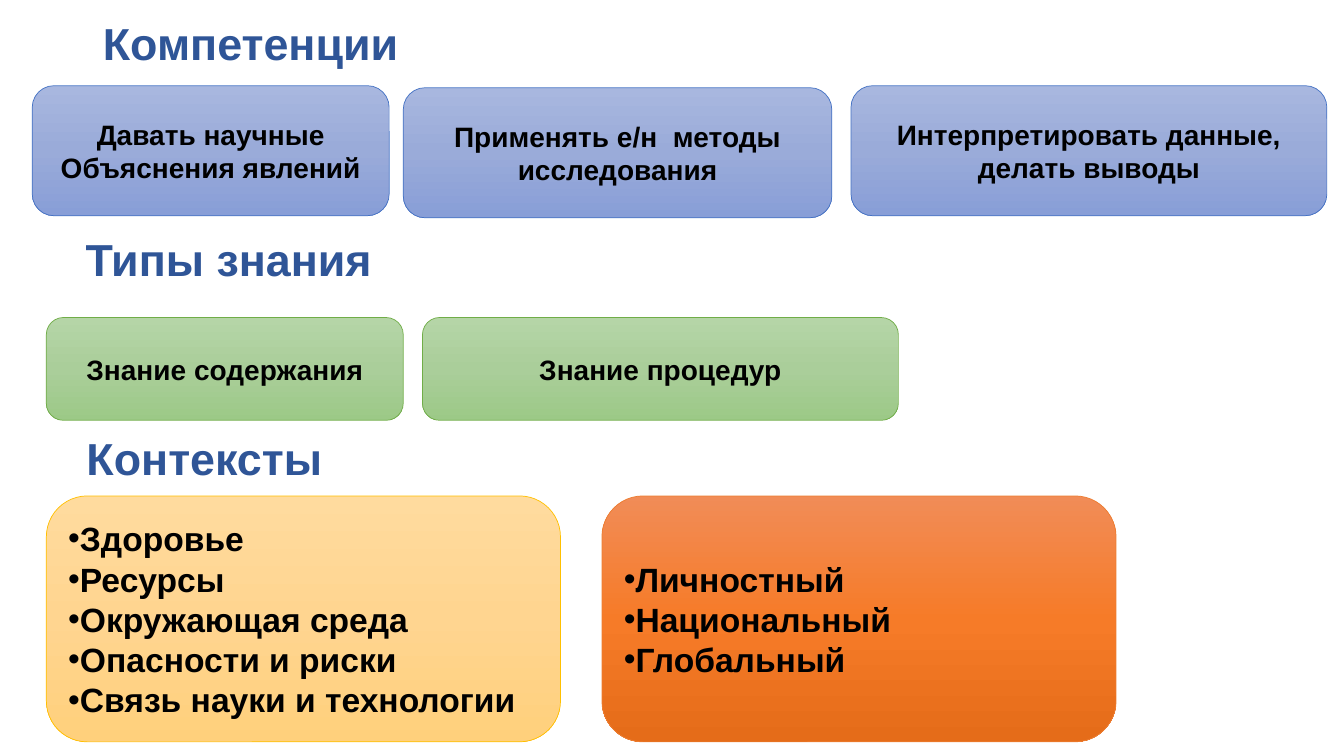
from copy import deepcopy
from dataclasses import dataclass

from lxml import etree
from pptx import Presentation
from pptx.dml.color import RGBColor
from pptx.enum.shapes import MSO_SHAPE as SHAPE
from pptx.enum.text import MSO_ANCHOR as ANCHOR, PP_ALIGN as ALIGN
from pptx.oxml.ns import qn
from pptx.util import Inches, Pt


@dataclass(frozen=True)
class Theme:
    font: str = "Arial"
    heading: str = "2F5597"
    text: str = "000000"
    heading_size: int = 32
    card_size: int = 20
    list_size: int = 24
    # Each card style: line colour, then gradient from top to bottom
    blue: tuple = ("4472C4", "A8B7DF", "9AABD9", "889ED7")
    green: tuple = ("70AD47", "B5D5A7", "AACE9A", "9CC987")
    yellow: tuple = ("FFC000", "FFDB9E", "FFD590", "FFD07C")
    orange: tuple = ("ED7D31", "F18C57", "F67B28", "E56C19")


THEME = Theme()


def rgb(value):
    return RGBColor.from_string(value)


def write_text(tf, lines, size=THEME.card_size, color=THEME.text,
               align=ALIGN.LEFT, bullet=None, spacing=None):
    """Fill a text frame with bold lines, one paragraph each."""
    tf.word_wrap = True
    tf.vertical_anchor = ANCHOR.MIDDLE
    for i, line in enumerate(lines):
        p = tf.paragraphs[0] if i == 0 else tf.add_paragraph()
        p.alignment = align
        p.space_before = Pt(0)
        if spacing:
            p.line_spacing = spacing
        if bullet:
            pPr = p._p.get_or_add_pPr()
            pPr.set("marL", "0")
            pPr.set("indent", "0")
            etree.SubElement(pPr, qn("a:buFont")).set("typeface", THEME.font)
            etree.SubElement(pPr, qn("a:buChar")).set("char", bullet)
        r = p.add_run()
        r.text = line
        r.font.name = THEME.font
        r.font.size = Pt(size)
        r.font.bold = True
        r.font.color.rgb = rgb(color)


def place(sp, left, top, width, height):
    sp.left, sp.top = Inches(left), Inches(top)
    sp.width, sp.height = Inches(width), Inches(height)


def add_heading(s, text, box, sp=None):
    """Write a section heading in a new text box or a given placeholder."""
    sp = sp or s.shapes.add_textbox(0, 0, 0, 0)
    place(sp, *box)
    write_text(sp.text_frame, [text], size=THEME.heading_size,
               color=THEME.heading, spacing=0.9)


def fill_gradient(sp, colors):
    """Apply a three-stop gradient running from top to bottom."""
    sp.fill.gradient()
    sp.fill.gradient_angle = 270
    first = sp._element.spPr.find(".//" + qn("a:gs"))
    middle = deepcopy(first)
    middle.set("pos", "50000")
    first.addnext(middle)
    for stop, color in zip(sp.fill.gradient_stops, colors):
        stop.color.rgb = rgb(color)


def add_card(s, lines, box, style, **text_format):
    sp = s.shapes.add_shape(SHAPE.ROUNDED_RECTANGLE, 0, 0, 0, 0)
    place(sp, *box)
    sp.shadow.inherit = False
    line_color, *gradient = style
    fill_gradient(sp, gradient)
    sp.line.color.rgb = rgb(line_color)
    sp.line.width = Pt(0.5)
    write_text(sp.text_frame, lines, **text_format)


def main():
    prs = Presentation()
    prs.slide_width, prs.slide_height = Inches(13.33), Inches(7.5)
    s = prs.slides.add_slide(prs.slide_layouts[5])

    # Competencies
    add_heading(s, "Компетенции", (0.92, 0.14, 5.06, 0.64), s.shapes.title)
    for left, top, width, lines in (
        (4, 0.87, 4.25, ["Применять е/н  методы", "исследования"]),
        (0.32, 0.85, 3.54, ["Давать научные", "Объяснения явлений"]),
        (8.44, 0.85, 4.72, ["Интерпретировать данные,", "делать выводы"]),
    ):
        add_card(s, lines, (left, top, width, 1.29), THEME.blue,
                 align=ALIGN.CENTER)

    # Types of knowledge
    add_heading(s, "Типы знания", (0.75, 2.19, 5.52, 0.81))
    for left, width, text in ((0.46, 3.54, "Знание содержания"),
                              (4.19, 4.72, "Знание процедур")):
        add_card(s, [text], (left, 3.15, width, 1.02), THEME.green,
                 align=ALIGN.CENTER)

    # Contexts
    add_heading(s, "Контексты", (0.76, 4.28, 2.93, 0.59))
    topics = ["Здоровье", "Ресурсы", "Окружающая среда",
              "Опасности и риски", "Связь науки и технологии"]
    levels = ["Личностный", "Национальный", "Глобальный"]
    for left, lines, style in ((0.46, topics, THEME.yellow),
                               (5.97, levels, THEME.orange)):
        add_card(s, lines, (left, 4.92, 5.1, 2.44), style,
                 size=THEME.list_size, bullet="•")

    prs.save("out.pptx")


if __name__ == "__main__":
    main()
